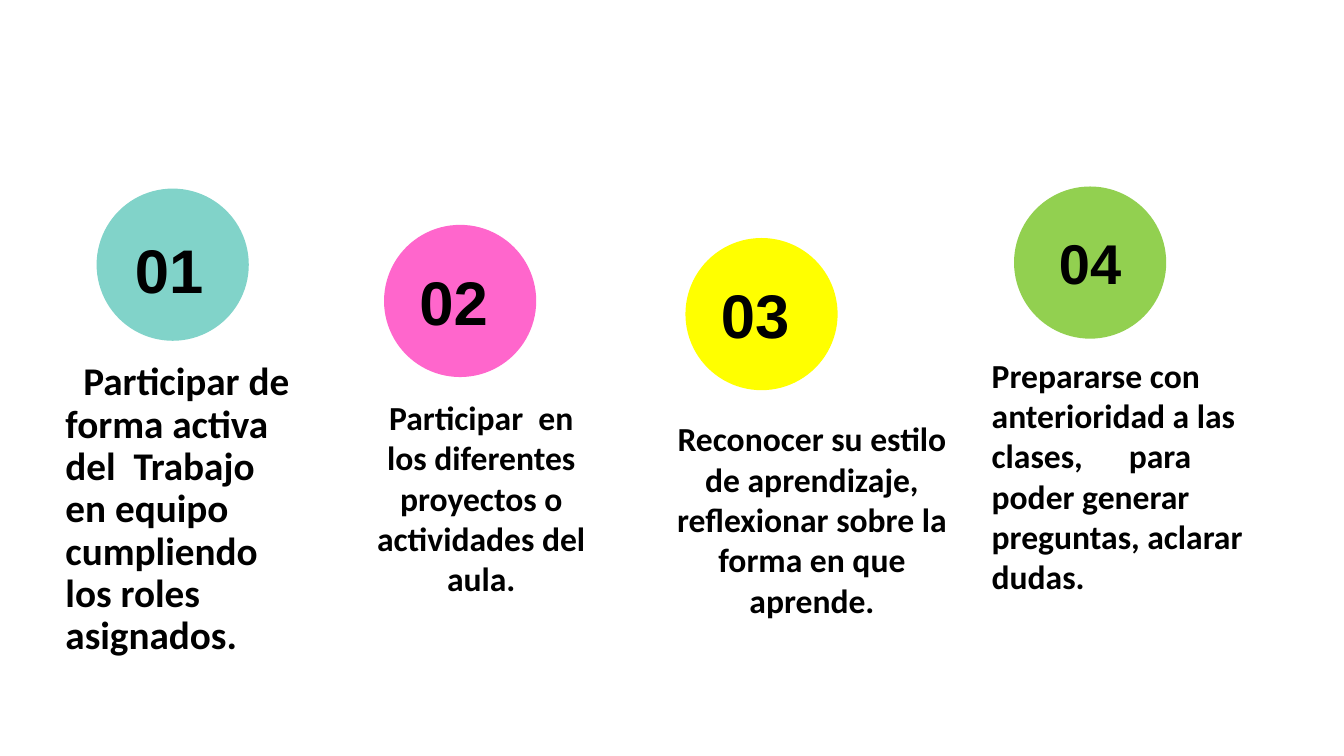
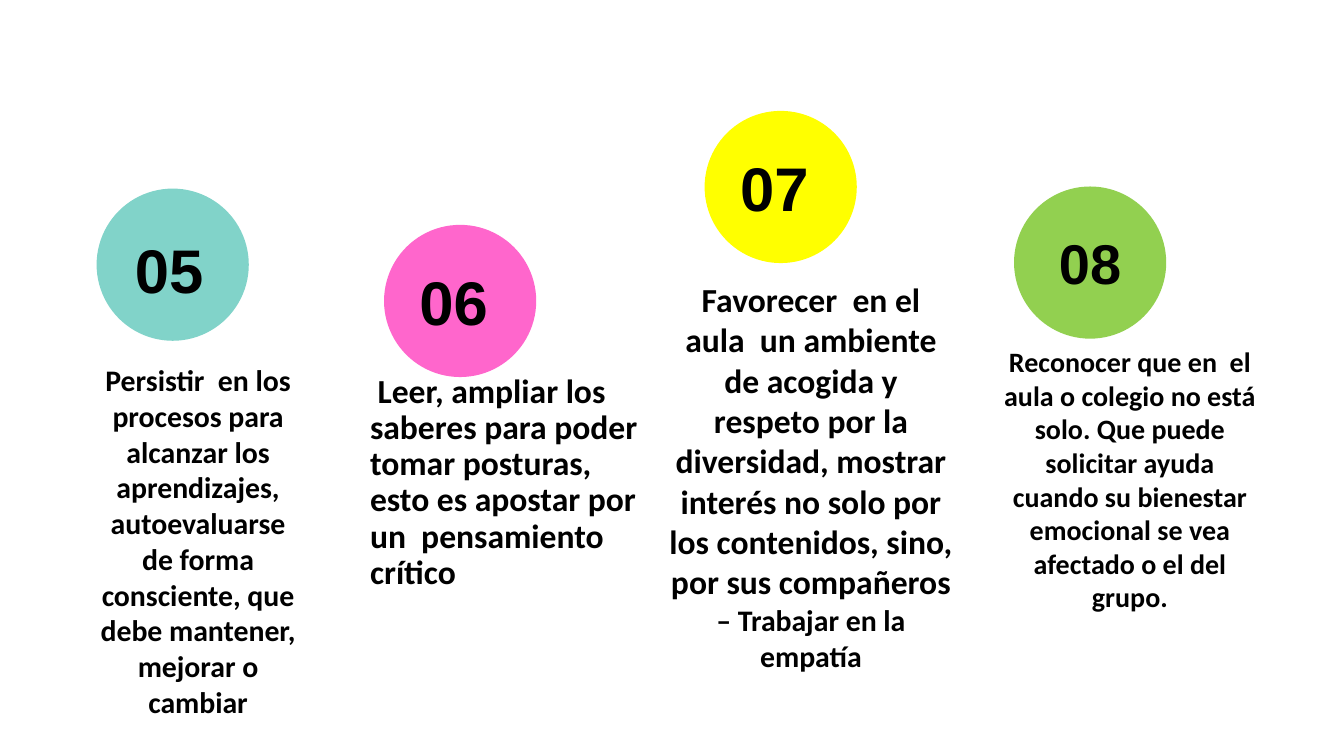
from dataclasses import dataclass

from lxml import etree
from pptx import Presentation
from pptx.dml.color import RGBColor
from pptx.enum.shapes import MSO_SHAPE
from pptx.enum.text import MSO_ANCHOR, PP_ALIGN
from pptx.oxml.ns import qn
from pptx.util import Pt

OVAL = MSO_SHAPE.OVAL
LEFT, CENTER = PP_ALIGN.LEFT, PP_ALIGN.CENTER
TOP, MIDDLE, BOTTOM = MSO_ANCHOR.TOP, MSO_ANCHOR.MIDDLE, MSO_ANCHOR.BOTTOM

BLACK = RGBColor(0x00, 0x00, 0x00)
TEAL = RGBColor(0x81, 0xD3, 0xC9)
PINK = RGBColor(0xFF, 0x66, 0xCC)
YELLOW = RGBColor(0xFF, 0xFF, 0x00)
GREEN = RGBColor(0x92, 0xD0, 0x50)

NUMBER_FONT, BODY_FONT = "Arial", "Calibri"
DIAMETER = 108.7
WIDE_INSETS = (9.4, 9.4)  # horizontal, vertical
NORMAL_INSETS = (7.2, 3.6)


@dataclass
class Badge:
    color: RGBColor
    left: float
    top: float
    size: float = 44
    align: int = LEFT
    label_box: tuple = ()  # number box relative to the circle, if separate


@dataclass
class Body:
    box: tuple  # left, top, width, height
    paragraphs: list  # each a list of (text, size)
    align: int = CENTER
    insets: tuple = NORMAL_INSETS
    line_spacing: float = 1.0
    first_indent: float = 0
    tab: float = 0


# Badges shared by both slides; only the yellow one moves
TEAL_BADGE = Badge(TEAL, 69, 134.7, label_box=(18, 25, 68.6, 69))
PINK_BADGE = Badge(PINK, 274.3, 160.6)
GREEN_BADGE = Badge(GREEN, 724.3, 133.2, 40, CENTER)

SLIDES = [
    [
        (TEAL_BADGE, Body(
            (37.4, 249, 186, 260.6),
            [[("Participar de forma activa del  Trabajo en equipo cumpliendo "
               "los roles asignados.", 28)]],
            LEFT, WIDE_INSETS, 0.9, first_indent=12.7)),
        (PINK_BADGE, Body(
            (262, 280, 163.5, 152.6),
            [[("Participar  en los diferentes proyectos o actividades "
               "del aula.", 24)]])),
        (Badge(YELLOW, 489.6, 170), Body(
            (474.5, 295.2, 211, 181.4),
            [[("Reconocer su estilo de aprendizaje, reflexionar sobre la "
               "forma en que aprende.", 24)]])),
        (GREEN_BADGE, Body(
            (701.3, 249.8, 216, 211),
            [[("Prepararse con anterioridad a las clases,\tpara poder generar "
               "preguntas, aclarar dudas.", 24)]],
            LEFT, tab=98)),
    ],
    [
        (TEAL_BADGE, Body(
            (62, 254.9, 159, 265.7),
            [[("Persistir  en los procesos para alcanzar los aprendizajes, "
               "autoevaluarse de forma consciente, que debe mantener,", 21.3)],
             [("mejorar o cambiar", 21.3)]])),
        (PINK_BADGE, Body(
            (254.9, 257.8, 219.6, 260.6),
            [[("Leer, ampliar los saberes para poder tomar posturas, esto es "
               "apostar por un  pensamiento crítico", 24)]],
            LEFT, WIDE_INSETS, 0.9, first_indent=5.4)),
        (Badge(YELLOW, 503.3, 79.2), Body(
            (470.9, 195.8, 216.8, 295.2),
            [[("Favorecer  en el aula  un ambiente de acogida y respeto por "
               "la diversidad, mostrar interés no solo por los contenidos, "
               "sino, por sus compañeros", 24),
              (" – Trabajar en la empatía", 21.3)]])),
        (GREEN_BADGE, Body(
            (709.2, 242.6, 195.8, 298),
            [[("Reconocer que en  el aula o colegio no está solo. Que puede "
               "solicitar ayuda cuando su bienestar emocional se vea afectado "
               "o el del grupo.", 20)]])),
    ],
]


def points(box):
    return [Pt(length) for length in box]


def set_frame(frame, insets, anchor):
    frame.word_wrap = True
    frame.vertical_anchor = anchor
    frame.margin_left = frame.margin_right = Pt(insets[0])
    frame.margin_top = frame.margin_bottom = Pt(insets[1])


def style_font(span, name, size):
    span.font.name = name
    span.font.size = Pt(size)
    span.font.bold = True
    span.font.color.rgb = BLACK


def add_badge(page, badge, number):
    circle = page.shapes.add_shape(
        OVAL, *points((badge.left, badge.top, DIAMETER, DIAMETER)))
    circle.shadow.inherit = False
    circle.fill.solid()
    circle.fill.fore_color.rgb = badge.color
    circle.line.fill.background()

    # The number sits in the circle or in its own box over it
    holder, anchor = circle, MIDDLE
    if badge.label_box:
        left, top, width, height = badge.label_box
        holder = page.shapes.add_textbox(
            *points((badge.left + left, badge.top + top, width, height)))
        anchor = BOTTOM
    frame = holder.text_frame
    set_frame(frame, WIDE_INSETS, anchor)
    para = frame.paragraphs[0]
    para.text = number
    para.alignment = badge.align
    if badge.label_box:
        para.line_spacing = 0.9
    style_font(para.runs[0], NUMBER_FONT, badge.size)


def add_body(page, body):
    frame = page.shapes.add_textbox(*points(body.box)).text_frame
    set_frame(frame, body.insets, TOP)
    for index, spans in enumerate(body.paragraphs):
        para = frame.add_paragraph() if index else frame.paragraphs[0]
        properties = para._p.get_or_add_pPr()
        if body.first_indent:
            properties.set("indent", str(Pt(body.first_indent)))
        if body.tab:
            tabs = etree.SubElement(properties, qn("a:tabLst"))
            etree.SubElement(tabs, qn("a:tab"),
                             pos=str(Pt(body.tab)), algn="l")
        para.alignment = body.align
        para.line_spacing = body.line_spacing
        for text, size in spans:
            span = para.add_run()
            span.text = text
            style_font(span, BODY_FONT, size)


def main():
    deck = Presentation()
    deck.slide_width, deck.slide_height = Pt(960), Pt(540)
    number = 0
    for steps in SLIDES:
        page = deck.slides.add_slide(deck.slide_layouts[6])
        for badge, body in steps:
            number += 1
            add_badge(page, badge, f"{number:02d}")
            add_body(page, body)
    deck.save("out.pptx")


if __name__ == "__main__":
    main()
